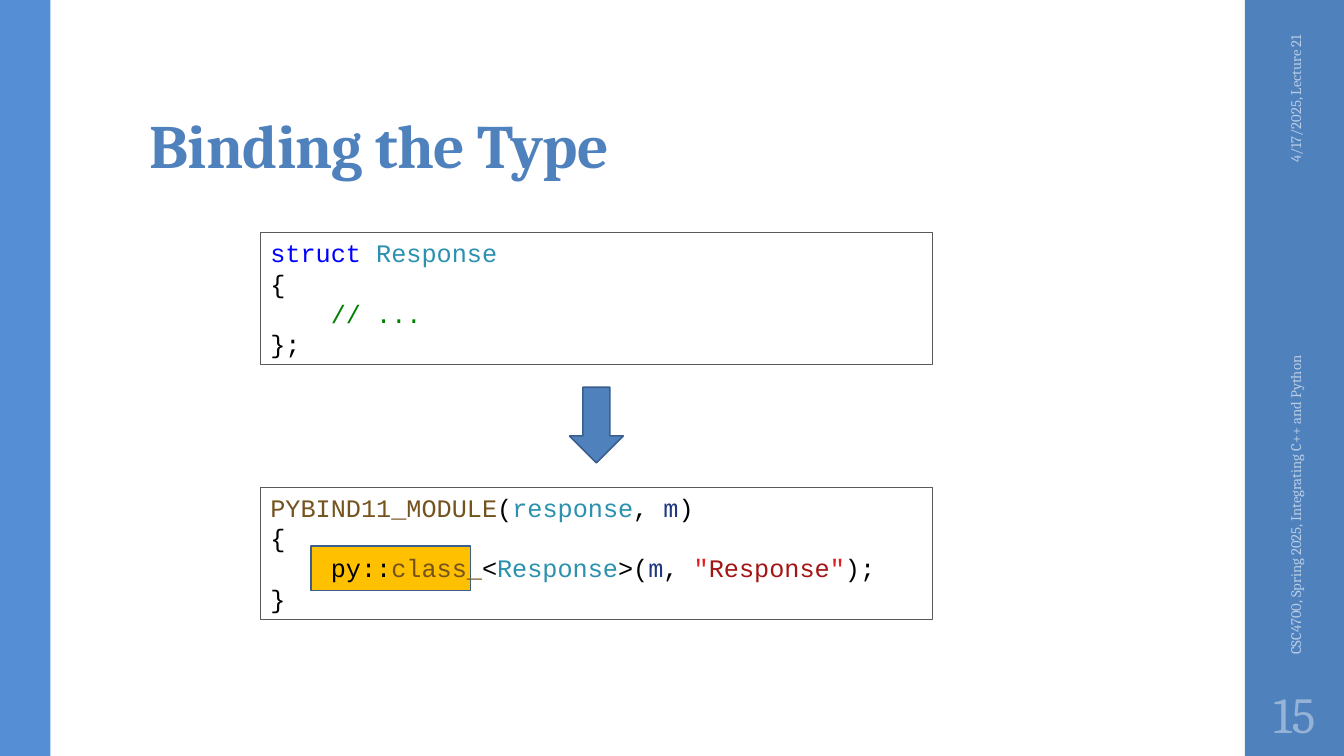
"""Build the slide that shows how a C++ type is bound to Python."""
from pptx import Presentation
from pptx.dml.color import RGBColor
from pptx.enum.shapes import MSO_SHAPE
from pptx.enum.text import MSO_ANCHOR, MSO_AUTO_SIZE, PP_ALIGN
from pptx.util import Inches, Pt

RECTANGLE, DOWN_ARROW = MSO_SHAPE.RECTANGLE, MSO_SHAPE.DOWN_ARROW
MIDDLE, BOTTOM, TOP = MSO_ANCHOR.MIDDLE, MSO_ANCHOR.BOTTOM, MSO_ANCHOR.TOP
LEFT, CENTER, RIGHT = PP_ALIGN.LEFT, PP_ALIGN.CENTER, PP_ALIGN.RIGHT
NO_AUTOFIT = MSO_AUTO_SIZE.NONE

COLUMNS, ROWS = 160, 90
CELL = Inches(7.5) / ROWS
SERIF, MONO = "Cambria", "Courier New"

COLORS = {
    "blue": "4F81BD",
    "light blue": "558ED5",
    "outline": "3A5F8C",
    "highlight": "FFC000",
    "footer": "B9CDE5",
    "page number": "95B3D7",
    "frame": "595959",
    "plain": "000000",
    "keyword": "0000FF",
    "type": "2B91AF",
    "comment": "008000",
    "function": "74531F",
    "variable": "1F377F",
    "quote": "E21F1F",
    "string": "A31515",
}

STRUCT_CODE = [
    [("struct ", "keyword"), ("Response", "type")],
    [("{", "plain")],
    [("    // ...", "comment")],
    [("};", "plain")],
]
MODULE_CODE = [
    [("PYBIND11_MODULE", "function"), ("(", "plain"), ("response", "type"),
     (", ", "plain"), ("m", "variable"), (")", "plain")],
    [("{", "plain")],
    [("    py::", "plain"), ("class_", "function"), ("<", "plain"),
     ("Response", "type"), (">(", "plain"), ("m", "variable"),
     (", ", "plain"), ('"', "quote"), ("Response", "string"),
     ('"', "quote"), (");", "plain")],
    [("}", "plain")],
]


def color(name):
    """Return the named colour."""
    return RGBColor.from_string(COLORS[name])


def grid(*cells):
    """Turn grid columns and rows into lengths."""
    return [round(cell * CELL) for cell in cells]


def set_font(font, name, size, tint=None):
    """Set face, size and, if given, colour."""
    font.name, font.size = name, Pt(size)
    if tint:
        font.color.rgb = color(tint)


def add_block(page, kind, place, fill=None, line=None, width=1.1):
    """Add a flat preset shape."""
    block = page.shapes.add_shape(kind, *grid(*place))
    block.shadow.inherit = False
    if fill:
        block.fill.solid()
        block.fill.fore_color.rgb = color(fill)
    else:
        block.fill.background()
    if line:
        block.line.color.rgb = color(line)
        block.line.width = Pt(width)
    else:
        block.line.fill.background()
    return block


def add_code(page, place, lines):
    """Add a framed listing with coloured syntax."""
    frame = add_block(page, RECTANGLE, place, line="frame", width=0.75).text_frame
    frame.word_wrap = True
    frame.vertical_anchor = TOP
    for index, spans in enumerate(lines):
        para = frame.add_paragraph() if index else frame.paragraphs[0]
        para.alignment = LEFT
        set_font(para.font, MONO, 18)
        for text, tint in spans:
            span = para.add_run()
            span.text = text
            span.font.color.rgb = color(tint)


def add_label(page, place, text, size, tint, alignment, rotation=0):
    """Add one line of marginal text."""
    box = page.shapes.add_textbox(*grid(*place))
    box.rotation = rotation
    frame = box.text_frame
    frame.word_wrap = True
    frame.vertical_anchor = MIDDLE
    frame.margin_left = frame.margin_right = Inches(0.1 if rotation else 0.05)
    para = frame.paragraphs[0]
    para.text = text
    para.alignment = alignment
    set_font(para.font, SERIF, size, tint)


def set_title(page, place, text):
    """Move and format the title placeholder."""
    title = page.shapes.title
    title.left, title.top, title.width, title.height = grid(*place)
    frame = title.text_frame
    frame.auto_size = NO_AUTOFIT
    frame.vertical_anchor = BOTTOM
    frame.margin_top = Inches(0.03)
    para = frame.paragraphs[0]
    para.alignment = LEFT
    para.line_spacing = 0.9
    set_font(para.font, SERIF, 44, "blue")
    para.font.bold = True
    span = para.add_run()
    span.text = text
    span.font.bold = True
    span._r.get_or_add_rPr().set("spc", "-50")


def main():
    """Compose and save the slide."""
    deck = Presentation()
    deck.slide_width, deck.slide_height = grid(COLUMNS, ROWS)
    page = deck.slides.add_slide(deck.slide_layouts[5])

    sidebar = 148.2
    add_block(page, RECTANGLE, (sidebar, 0, COLUMNS - sidebar, ROWS), "blue")
    add_block(page, RECTANGLE, (0, 0, 6, ROWS), "light blue")
    add_block(page, RECTANGLE, (37, 65, 19, 5.3), "highlight", "outline")
    set_title(page, (16.6, 3.8, 127.2, 18.4), "Binding the Type")

    add_label(page, (141.7, 13.1, 25, 4.8), "4/17/2025, Lecture 21",
              10.5, "footer", RIGHT, 270)
    add_label(page, (130.7, 53.2, 47, 4.8),
              "CSC4700, Spring 2025, Integrating C++ and Python",
              10.5, "footer", LEFT, 270)
    add_label(page, (sidebar, 81, COLUMNS - sidebar, 7.8), "15",
              36, "page number", CENTER)

    for top, lines in ((27.7, STRUCT_CODE), (58, MODULE_CODE)):
        add_code(page, (31, top, 80, 15.75), lines)
    add_block(page, DOWN_ARROW, (67.8, 46.1, 6.4, 9), "blue", "outline")
    deck.save("out.pptx")


if __name__ == "__main__":
    main()
